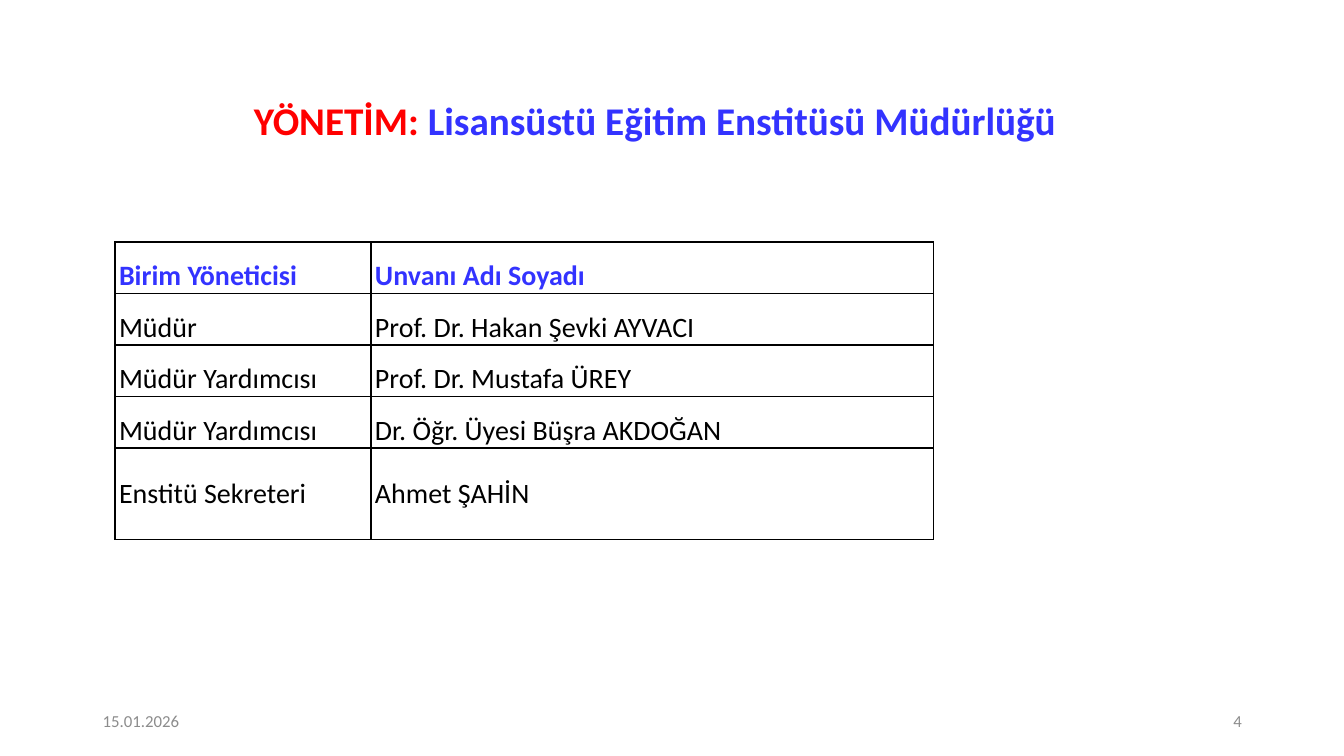
from lxml.etree import SubElement
from pptx import Presentation
from pptx.dml.color import RGBColor
from pptx.enum.text import MSO_ANCHOR, PP_ALIGN
from pptx.oxml.ns import qn
from pptx.util import Cm, Pt

BLUE, RED, BLACK, GRAY = "3333FF", "FF0000", "000000", "8C8C8C"


def add_run(paragraph, text, size, color, bold=False):
    run = paragraph.add_run()
    run.text = text
    run.font.name = "Calibri"
    run.font.size = Pt(size)
    run.font.bold = bold
    run.font.color.rgb = RGBColor.from_string(color)


def add_border(cell, side):
    line = SubElement(cell._tc.get_or_add_tcPr(), qn(f"a:{side}"), w=str(Pt(1)))
    fill = SubElement(line, qn("a:solidFill"))
    SubElement(fill, qn("a:srgbClr"), val=BLACK)


presentation = Presentation()
presentation.slide_width = Cm(33.87)
presentation.slide_height = Cm(19.05)
slide = presentation.slides.add_slide(presentation.slide_layouts[5])

title = slide.shapes.title
title.left, title.top, title.width, title.height = Cm(2.9), Cm(2.13), Cm(27.2), Cm(1.93)
title.text_frame.vertical_anchor = MSO_ANCHOR.MIDDLE
paragraph = title.text_frame.paragraphs[0]
paragraph.alignment = PP_ALIGN.CENTER
paragraph.line_spacing = 0.9
add_run(paragraph, "YÖNETİM: ", 28, RED, True)
add_run(paragraph, "Lisansüstü Eğitim Enstitüsü Müdürlüğü", 28, BLUE, True)

managers = [
    ("Birim Yöneticisi", "Unvanı Adı Soyadı"),
    ("Müdür", "Prof. Dr. Hakan Şevki AYVACI"),
    ("Müdür Yardımcısı", "Prof. Dr. Mustafa ÜREY"),
    ("Müdür Yardımcısı", "Dr. Öğr. Üyesi Büşra AKDOĞAN"),
    ("Enstitü Sekreteri", "Ahmet ŞAHİN"),
]
last_row = len(managers) - 1
table = slide.shapes.add_table(
    len(managers), 2, Cm(2.9), Cm(6.1), Cm(20.63), Cm(6.83)
).table
table.columns[0].width = Cm(6.45)
table.columns[1].width = Cm(14.18)

for row_index, names in enumerate(managers):
    table.rows[row_index].height = Cm(2.31 if row_index == last_row else 1.13)
    for column_index, name in enumerate(names):
        cell = table.cell(row_index, column_index)
        cell.margin_left = cell.margin_right = cell.margin_top = cell.margin_bottom = 0
        cell.vertical_anchor = MSO_ANCHOR.MIDDLE
        for side in ("lnL", "lnR", "lnT", "lnB"):
            add_border(cell, side)
        cell.fill.background()
        paragraph = cell.text_frame.paragraphs[0]
        paragraph._p.get_or_add_pPr().set("marL", str(Cm(0.1)))
        paragraph.line_spacing = 1.0 if row_index == last_row else 1.5
        is_header = row_index == 0
        add_run(paragraph, name, 20, BLUE if is_header else BLACK, is_header)

for text, left, alignment in (
    ("15.01.2026", 2.34, PP_ALIGN.LEFT),
    ("4", 23.93, PP_ALIGN.RIGHT),
):
    footer = slide.shapes.add_textbox(Cm(left), Cm(17.65), Cm(7.62), Cm(1.02))
    footer.text_frame.word_wrap = True
    footer.text_frame.vertical_anchor = MSO_ANCHOR.MIDDLE
    paragraph = footer.text_frame.paragraphs[0]
    paragraph.alignment = alignment
    add_run(paragraph, text, 12, GRAY)

presentation.save("out.pptx")
